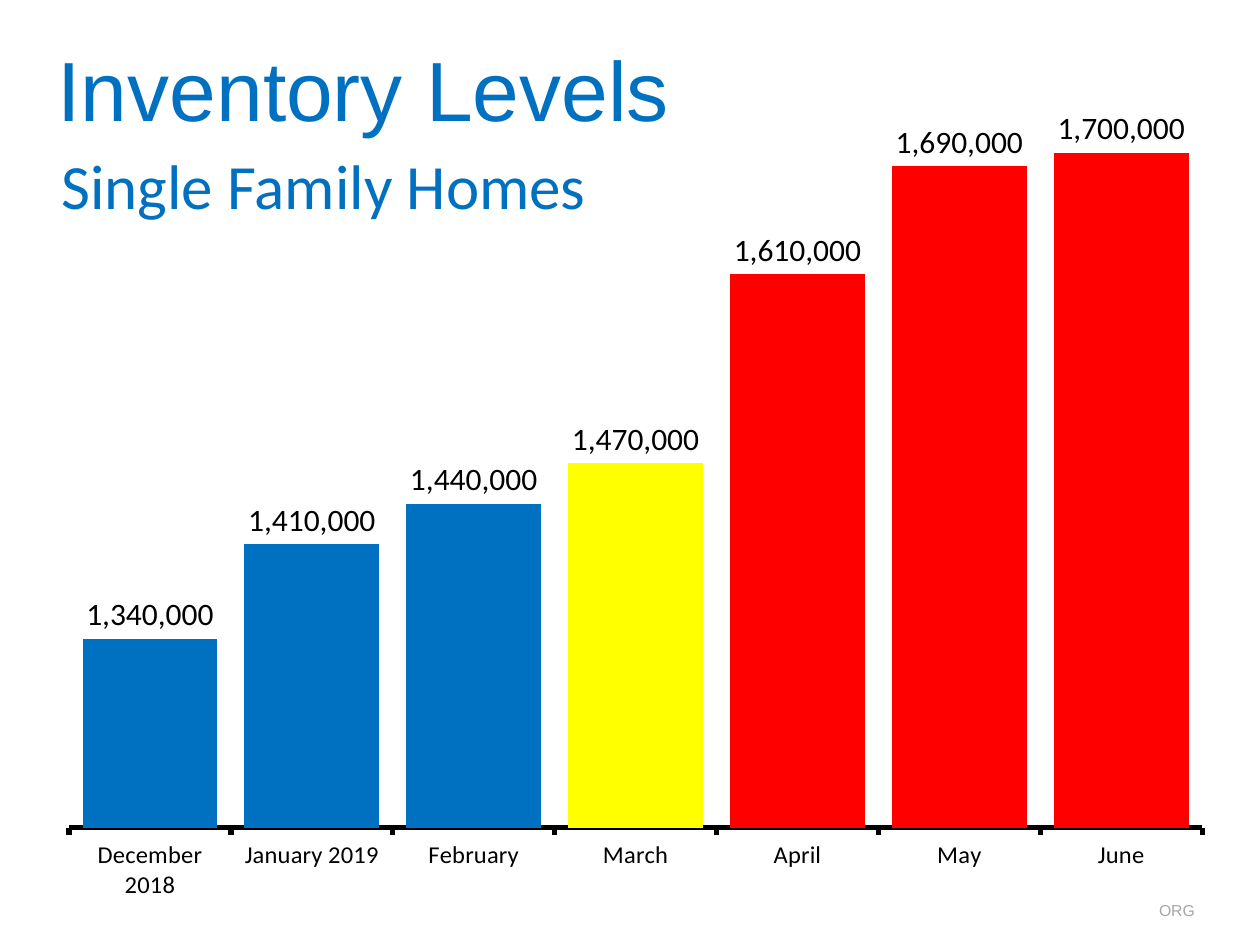
from lxml.etree import SubElement
from pptx import Presentation
from pptx.chart.data import CategoryChartData
from pptx.dml.color import RGBColor
from pptx.enum.chart import XL_CHART_TYPE as ChartType
from pptx.enum.chart import XL_LABEL_POSITION as LabelPosition
from pptx.enum.chart import XL_TICK_MARK as TickMark
from pptx.enum.text import MSO_AUTO_SIZE as AutoSize
from pptx.oxml.ns import qn
from pptx.util import Inches, Pt

BLUE, YELLOW, RED, BLACK, GREY = "0070C0", "FFFF00", "FF0000", "000000", "A6A6A6"
INVENTORY = [
    ("December 2018", 1340000, BLUE),
    ("January 2019", 1410000, BLUE),
    ("February", 1440000, BLUE),
    ("March", 1470000, YELLOW),
    ("April", 1610000, RED),
    ("May", 1690000, RED),
    ("June", 1700000, RED),
]


def color(value):
    return RGBColor.from_string(value)


def set_font(font, name="Calibri", size=18, fill=BLACK):
    font.name = name
    font.size = Pt(size)
    font.color.rgb = color(fill)


def write(box, text, **style):
    span = box.text_frame.paragraphs[0].add_run()
    span.text = text
    set_font(span.font, **style)


def place_plot(chart, **fractions):
    area = chart._chartSpace.chart.plotArea
    for old in area.findall(qn("c:layout")):
        area.remove(old)
    layout = area.makeelement(qn("c:layout"))
    area.insert(0, layout)
    manual = SubElement(layout, qn("c:manualLayout"))
    settings = {"layoutTarget": "inner", "xMode": "edge", "yMode": "edge", **fractions}
    for tag, value in settings.items():
        SubElement(manual, qn(f"c:{tag}")).set("val", str(value))


class SlideBuilder:
    """Holds the current slide and the style of its elements."""

    number_format = "#,##0"

    def __init__(self, page):
        self.page = page

    def text(self, text, left, top, width, height, **style):
        box = self.page.shapes.add_textbox(
            Inches(left), Inches(top), Inches(width), Inches(height)
        )
        box.text_frame.word_wrap = False
        box.text_frame.auto_size = AutoSize.SHAPE_TO_FIT_TEXT
        write(box, text, **style)

    def columns(self, rows, left, top, width, height, low, high):
        names, values, fills = zip(*rows)
        data = CategoryChartData(number_format=self.number_format)
        data.categories = names
        data.add_series("Series 1", values)
        chart = self.page.shapes.add_chart(
            ChartType.COLUMN_CLUSTERED,
            Inches(left), Inches(top), Inches(width), Inches(height), data,
        ).chart
        chart.has_legend = False
        chart.has_title = False
        set_font(chart.font)
        place_plot(chart, x=0.017, y=0, w=0.967, h=0.929)

        months = chart.category_axis
        months.major_tick_mark = TickMark.OUTSIDE
        months.has_major_gridlines = False
        set_font(months.tick_labels.font, size=14)
        months.format.line.color.rgb = color(BLACK)
        months.format.line.width = Pt(3)

        amounts = chart.value_axis
        amounts.minimum_scale, amounts.maximum_scale = low, high
        amounts.has_major_gridlines = False
        amounts.visible = False

        plot = chart.plots[0]
        plot.gap_width = 20
        plot.vary_by_categories = False
        series = plot.series[0]
        series.format.fill.solid()
        series.format.fill.fore_color.rgb = color(BLUE)
        for index, fill in enumerate(fills):
            if fill != BLUE:
                point = series.points[index].format.fill
                point.solid()
                point.fore_color.rgb = color(fill)

        labels = series.data_labels
        labels.show_value = True
        labels.position = LabelPosition.OUTSIDE_END
        labels.number_format = self.number_format
        labels.number_format_is_linked = False
        set_font(labels.font)


def main():
    deck = Presentation()
    deck.slide_width, deck.slide_height = Inches(10), Inches(7.5)
    builder = SlideBuilder(deck.slides.add_slide(deck.slide_layouts[6]))
    builder.columns(INVENTORY, 0.39, 0.14, 9.3, 7, low=1200000, high=1800000)
    builder.text("Inventory Levels", 0.36, 0.25, 5.3, 0.91, name="Arial", size=48, fill=BLUE)
    builder.text("ORG", 9.1, 7.1, 0.55, 0.25, name="Arial", size=9, fill=GREY)
    builder.text("Single Family Homes", 0.39, 1.11, 4.4, 0.71, size=36, fill=BLUE)
    deck.save("out.pptx")


if __name__ == "__main__":
    main()
